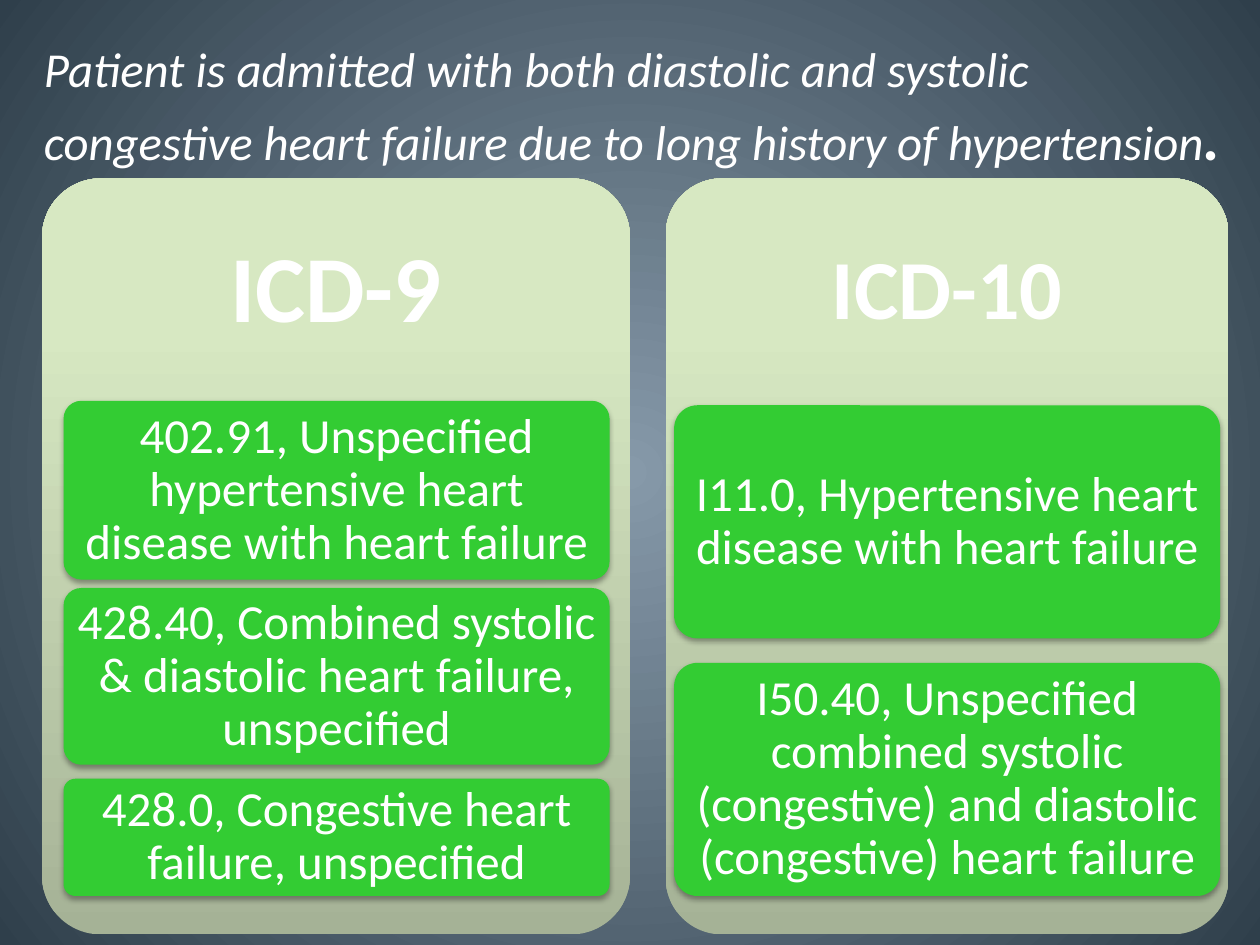
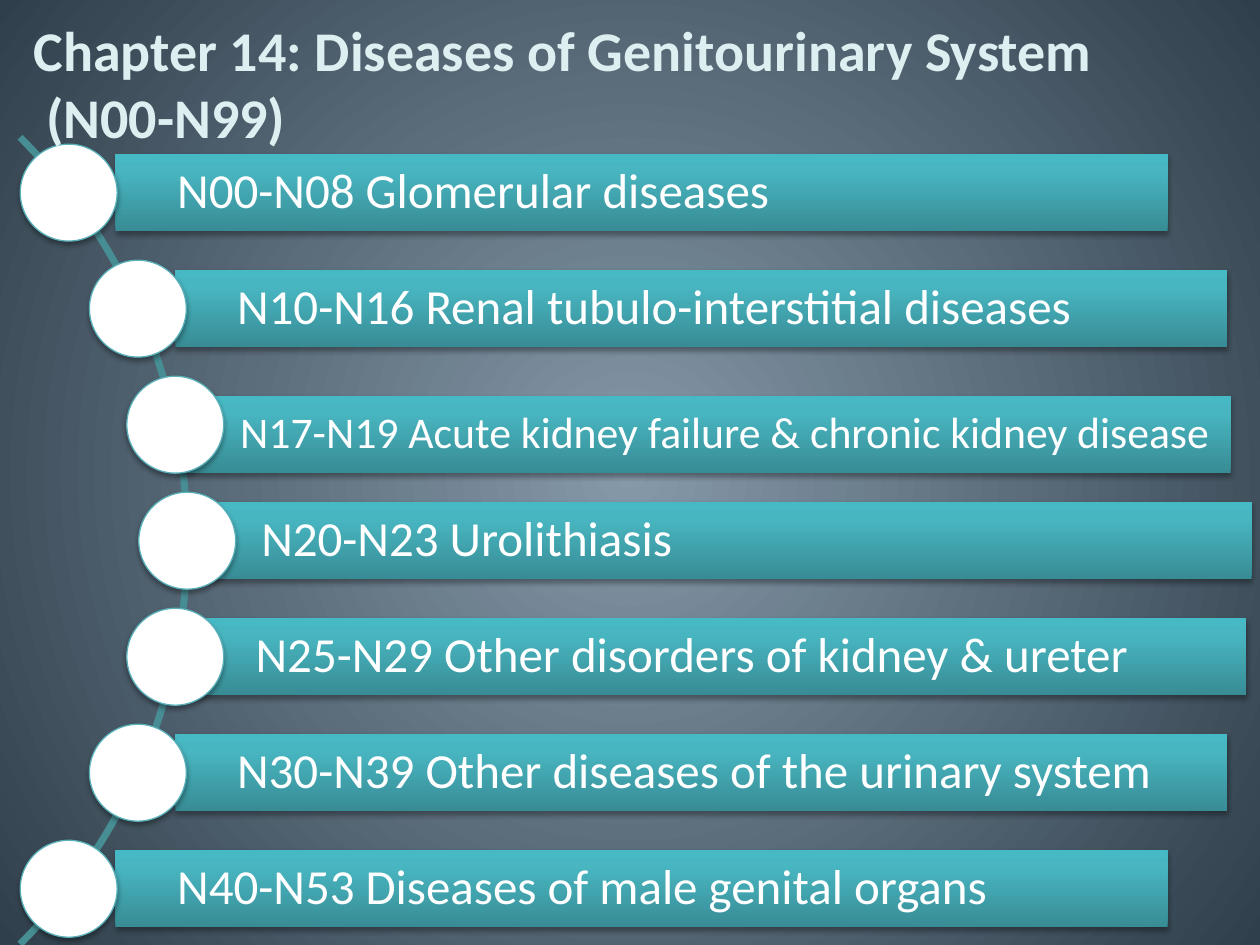
from dataclasses import dataclass
from math import cos, radians, sin, sqrt

from lxml.etree import SubElement
from pptx import Presentation
from pptx.dml.color import RGBColor
from pptx.enum.shapes import MSO_SHAPE as SHAPE
from pptx.enum.text import MSO_ANCHOR as ANCHOR, PP_ALIGN as ALIGN
from pptx.oxml import parse_xml
from pptx.oxml.ns import nsdecls, qn
from pptx.util import Pt

FONT = "Calibri"
WHITE = RGBColor(0xFF, 0xFF, 0xFF)
BLACK = RGBColor(0x00, 0x00, 0x00)
GREEN = RGBColor(0x33, 0xCC, 0x33)
ICE = RGBColor(0xDE, 0xEF, 0xF1)
ARC_TEAL = RGBColor(0x47, 0x8D, 0x94)
DOT_LINE = RGBColor(0x59, 0xB0, 0xB9)
BACKDROP = [(0, RGBColor(0x86, 0x99, 0xA9)), (100, RGBColor(0x2F, 0x3F, 0x4B))]
SAGE = [(0, RGBColor(0xA5, 0xB2, 0x96)), (80, RGBColor(0xD7, 0xE8, 0xC2)),
        (100, RGBColor(0xD8, 0xEA, 0xC2))]
TEAL = [(0, RGBColor(0x38, 0x8C, 0x95)), (80, RGBColor(0x48, 0xB6, 0xC1)),
        (100, RGBColor(0x46, 0xB9, 0xC4))]
UPWARD = '<a:lin ang="16200000" scaled="0"/>'
RADIAL = ('<a:path path="circle"><a:fillToRect l="50000" t="50000" '
          'r="50000" b="50000"/></a:path>')


@dataclass
class CodeBox:
    text: str
    top: float
    height: float


@dataclass
class Panel:
    heading: str
    heading_size: float
    left: float
    width: float
    box_left: float
    boxes: list[CodeBox]


@dataclass
class Bar:
    text: str
    left: float
    size: float = 28
    drop: float = 0


PANELS = [
    Panel("ICD-9", 54, 24, 336, 36.3, [
        CodeBox("402.91, Unspecified hypertensive heart disease with heart failure", 229, 102.2),
        CodeBox("428.40, Combined systolic & diastolic heart failure, unspecified", 336, 101),
        CodeBox("428.0, Congestive heart failure, unspecified", 445, 67),
    ]),
    Panel("ICD-10", 48, 380.4, 321.6, 385.2, [
        CodeBox("I11.0, Hypertensive heart disease with heart failure", 231.6, 133.2),
        CodeBox("I50.40, Unspecified combined systolic (congestive) and diastolic "
                "(congestive) heart failure", 378.8, 133.2),
    ]),
]
PANEL_TOP, PANEL_HEIGHT, BOX_WIDTH = 102, 432, 312

BARS = [
    Bar("N00-N08 Glomerular diseases", 66),
    Bar("N10-N16 Renal tubulo-interstitial diseases", 100.2),
    Bar("N17-N19 Acute kidney failure & chronic kidney disease", 102, 25, 5.5),
    Bar("N20-N23 Urolithiasis", 114),
    Bar("N25-N29 Other disorders of kidney & ureter", 110.8),
    Bar("N30-N39 Other diseases of the urinary system", 100.2),
    Bar("N40-N53 Diseases of male genital organs", 66),
]
BAR_WIDTH, BAR_HEIGHT, BAR_PITCH, DOT = 601.2, 44, 66.3, 55.4
ARC_X, ARC_Y, ARC_RADIUS = -219, 309, 326


def set_gradient(fill, root, stops: list, direction: str) -> None:
    fill.gradient()
    old = root.find(".//" + qn("a:gradFill"))
    stop_xml = "".join(f'<a:gs pos="{pos * 1000}"><a:srgbClr val="{color}"/></a:gs>'
                       for pos, color in stops)
    old.getparent().replace(old, parse_xml(
        f'<a:gradFill {nsdecls("a")} rotWithShape="1">'
        f'<a:gsLst>{stop_xml}</a:gsLst>{direction}</a:gradFill>'))


def add_slide(prs):
    s = prs.slides.add_slide(prs.slide_layouts[6])
    set_gradient(s.background.fill, s.element, BACKDROP, RADIAL)
    return s


def add_shadow(sp) -> None:
    effects = sp._element.spPr.find(qn("a:effectLst"))
    shadow = SubElement(effects, qn("a:outerShdw"), blurRad=str(Pt(3.1)), dist=str(Pt(1.8)),
                        dir="5400000", rotWithShape="0")
    color = SubElement(shadow, qn("a:srgbClr"), val=str(BLACK))
    SubElement(color, qn("a:alpha"), val="35000")


def add_block(s, kind, left: float, top: float, width: float, height: float,
              fill, shadow: bool = True):
    sp = s.shapes.add_shape(kind, Pt(left), Pt(top), Pt(width), Pt(height))
    if kind == SHAPE.ROUNDED_RECTANGLE:
        sp.adjustments[0] = 0.1
    if isinstance(fill, list):
        set_gradient(sp.fill, sp._element.spPr, fill, UPWARD)
    else:
        sp.fill.solid()
        sp.fill.fore_color.rgb = fill
    sp.line.fill.background()
    sp.shadow.inherit = False
    if shadow:
        add_shadow(sp)
    return sp


def style_run(r, size: float, color: RGBColor = WHITE, bold: bool = False,
              italic: bool = False) -> None:
    r.font.name, r.font.size = FONT, Pt(size)
    r.font.color.rgb = color
    r.font.bold, r.font.italic = bold, italic


def write(sp, text: str, size: float, align=ALIGN.LEFT, anchor=ANCHOR.MIDDLE,
          insets: tuple = (7.2, 3.6, 7.2, 3.6), spacing: float = 1.0,
          color: RGBColor = WHITE, bold: bool = False, italic: bool = False):
    tf = sp.text_frame
    tf.word_wrap = True
    tf.vertical_anchor = anchor
    tf.margin_left, tf.margin_top, tf.margin_right, tf.margin_bottom = map(Pt, insets)
    tf.text = text
    p = tf.paragraphs[0]
    p.alignment, p.line_spacing = align, spacing
    for r in p.runs:
        style_run(r, size, color, bold, italic)
    return p


def add_text(s, left: float, top: float, width: float, height: float, text: str,
             size: float, **style):
    sp = s.shapes.add_textbox(Pt(left), Pt(top), Pt(width), Pt(height))
    return write(sp, text, size, **style)


def draw_panel(s, panel: Panel) -> None:
    add_block(s, SHAPE.ROUNDED_RECTANGLE, panel.left, PANEL_TOP, panel.width,
              PANEL_HEIGHT, SAGE, shadow=False)
    add_text(s, panel.left, PANEL_TOP, panel.width, PANEL_HEIGHT * 0.3, panel.heading,
             panel.heading_size, align=ALIGN.CENTER, spacing=0.9, bold=True)
    for box in panel.boxes:
        sp = add_block(s, SHAPE.ROUNDED_RECTANGLE, panel.box_left, box.top, BOX_WIDTH,
                       box.height, GREEN)
        write(sp, box.text, 28, align=ALIGN.CENTER, insets=(2, 2, 2, 2), spacing=0.9)


def draw_arc(s) -> None:
    points = [(Pt(ARC_X + ARC_RADIUS * cos(radians(a))),
               Pt(ARC_Y + ARC_RADIUS * sin(radians(a)))) for a in range(-45, 46)]
    builder = s.shapes.build_freeform(*points[0])
    builder.add_line_segments(points[1:], close=False)
    sp = builder.convert_to_shape()
    sp.fill.background()
    sp.line.color.rgb = ARC_TEAL
    sp.line.width = Pt(4)
    sp.shadow.inherit = False


def draw_bar(s, bar: Bar, index: int) -> None:
    offset = (index - len(BARS) // 2) * BAR_PITCH
    y = ARC_Y + offset
    x = ARC_X + sqrt(ARC_RADIUS ** 2 - offset ** 2)
    sp = add_block(s, SHAPE.RECTANGLE, bar.left, y - BAR_HEIGHT / 2 + bar.drop,
                   BAR_WIDTH, BAR_HEIGHT, TEAL)
    write(sp, bar.text, bar.size, insets=(35.3, 5.5, 5.5, 5.5), spacing=0.9)
    dot = add_block(s, SHAPE.OVAL, x - DOT / 2, y - DOT / 2, DOT, DOT, WHITE)
    dot.line.color.rgb = DOT_LINE
    dot.line.width = Pt(0.75)


def build_comparison(prs) -> None:
    s = add_slide(prs)
    for panel in PANELS:
        draw_panel(s, panel)
    p = add_text(s, 18, 18.8, 690, 86, "Patient is admitted with both diastolic and systolic "
                 "congestive heart failure due to long history of hypertension",
                 27.9, anchor=ANCHOR.TOP, italic=True)
    r = p.add_run()
    r.text = "."
    style_run(r, 36, bold=True, italic=True)


def build_chapter(prs) -> None:
    s = add_slide(prs)
    draw_arc(s)
    for index, bar in enumerate(BARS):
        draw_bar(s, bar, index)
    add_text(s, 12, 2, 708, 90, "Chapter 14: Diseases of Genitourinary System\v (N00-N99)",
             32, color=ICE, bold=True)


def main() -> None:
    prs = Presentation()
    prs.slide_width, prs.slide_height = Pt(720), Pt(540)
    build_comparison(prs)
    build_chapter(prs)
    prs.save("out.pptx")


if __name__ == "__main__":
    main()
